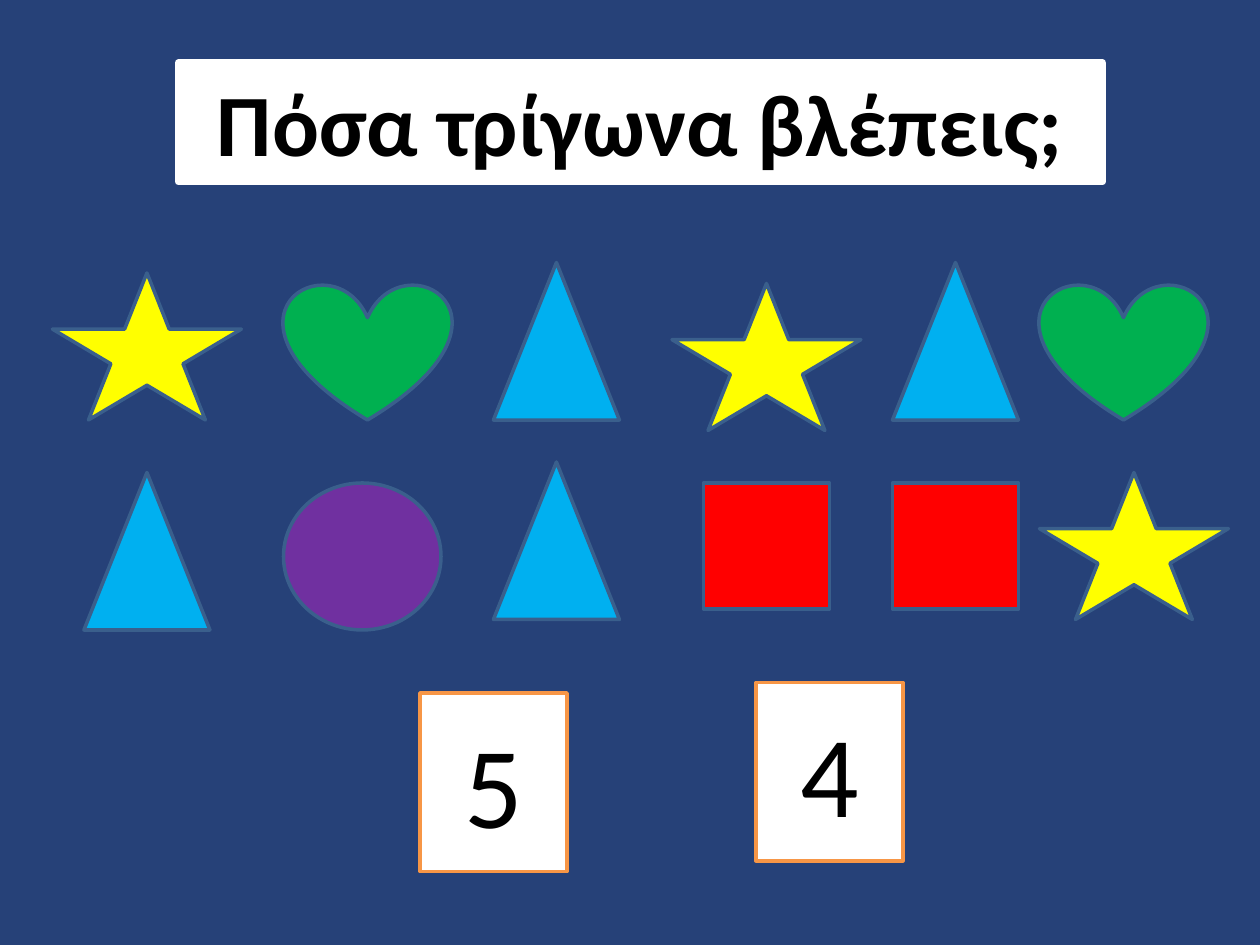
import pptx
import pptx.util
import pptx.dml.color
import pptx.enum.shapes
import pptx.enum.text

Pt = pptx.util.Pt
RGB = pptx.dml.color.RGBColor
KIND = pptx.enum.shapes.MSO_SHAPE
ALIGN = pptx.enum.text.PP_ALIGN
ANCHOR = pptx.enum.text.MSO_ANCHOR
FIT = pptx.enum.text.MSO_AUTO_SIZE

NAVY = RGB(0x26, 0x41, 0x78)
STEEL = RGB(0x3A, 0x5F, 0x8C)
YELLOW = RGB(0xFF, 0xFF, 0x00)
GREEN = RGB(0x00, 0xB0, 0x50)
BLUE = RGB(0x00, 0xB0, 0xF0)
PURPLE = RGB(0x70, 0x30, 0xA0)
RED = RGB(0xFF, 0x00, 0x00)
ORANGE = RGB(0xF7, 0x96, 0x46)
WHITE = RGB(0xFF, 0xFF, 0xFF)
BLACK = RGB(0x00, 0x00, 0x00)

# Content: question, answers and rows of figures
ASK = "Πόσα τρίγωνα βλέπεις;"
ANSWERS = [("5", 240, 396), ("4", 432, 390)]  # text, left, top
FIGURES = {  # kind, fill, width, height
    "star": (KIND.STAR_5_POINT, YELLOW, 108, 84),
    "heart": (KIND.HEART, GREEN, 96, 78),
    "triangle": (KIND.ISOSCELES_TRIANGLE, BLUE, 72, 90),
    "circle": (KIND.OVAL, PURPLE, 90, 84),
    "square": (KIND.RECTANGLE, RED, 72, 72),
}
ROWS = [  # name, left, bottom
    [("star", 30, 240), ("heart", 162, 240), ("triangle", 282, 240),
     ("star", 384, 246), ("triangle", 510, 240), ("heart", 594, 240)],
    [("triangle", 48, 360), ("circle", 162, 360), ("triangle", 282, 354),
     ("square", 402, 348), ("square", 510, 348), ("star", 594, 354)],
]


def paint(shape, fill, line, width):
    shape.fill.solid()
    shape.fill.fore_color.rgb = fill
    shape.line.color.rgb = line
    shape.line.width = Pt(width)


def draw(kind, box, fill, line):
    shape = slide.shapes.add_shape(kind, *map(Pt, box))
    shape.shadow.inherit = False
    paint(shape, fill, line, 2)
    return shape


def write(shape, text, frame, font):
    body = shape.text_frame
    body.text = text
    for name, value in frame.items():
        setattr(body, name, value)
    para = body.paragraphs[0]
    para.alignment = ALIGN.CENTER
    run = para.runs[0]
    for name, value in font.items():
        setattr(run.font, name, value)
    run.font.color.rgb = BLACK


deck = pptx.Presentation()
deck.slide_width, deck.slide_height = Pt(720), Pt(540)
slide = deck.slides.add_slide(deck.slide_layouts[5])
slide.background.fill.solid()
slide.background.fill.fore_color.rgb = NAVY

# Question
title = slide.shapes.title
place = {"left": 102, "top": 36, "width": 528, "height": 67.68}
for name, value in place.items():
    setattr(title, name, Pt(value))
paint(title, WHITE, WHITE, 4.5)
write(title, ASK,
      {"vertical_anchor": ANCHOR.TOP, "word_wrap": True,
       "auto_size": FIT.SHAPE_TO_FIT_TEXT},
      {"name": "Calibri", "size": Pt(50), "bold": True})

# Figures to count
for row in ROWS:
    for name, left, bottom in row:
        kind, fill, wide, high = FIGURES[name]
        draw(kind, (left, bottom - high, wide, high), fill, STEEL)

# Answer cards
for text, left, top in ANSWERS:
    card = draw(KIND.RECTANGLE, (left, top, 84, 102), WHITE, ORANGE)
    write(card, text, {"vertical_anchor": ANCHOR.MIDDLE, "word_wrap": True},
          {"name": "Calibri", "size": Pt(66)})

deck.save("out.pptx")
